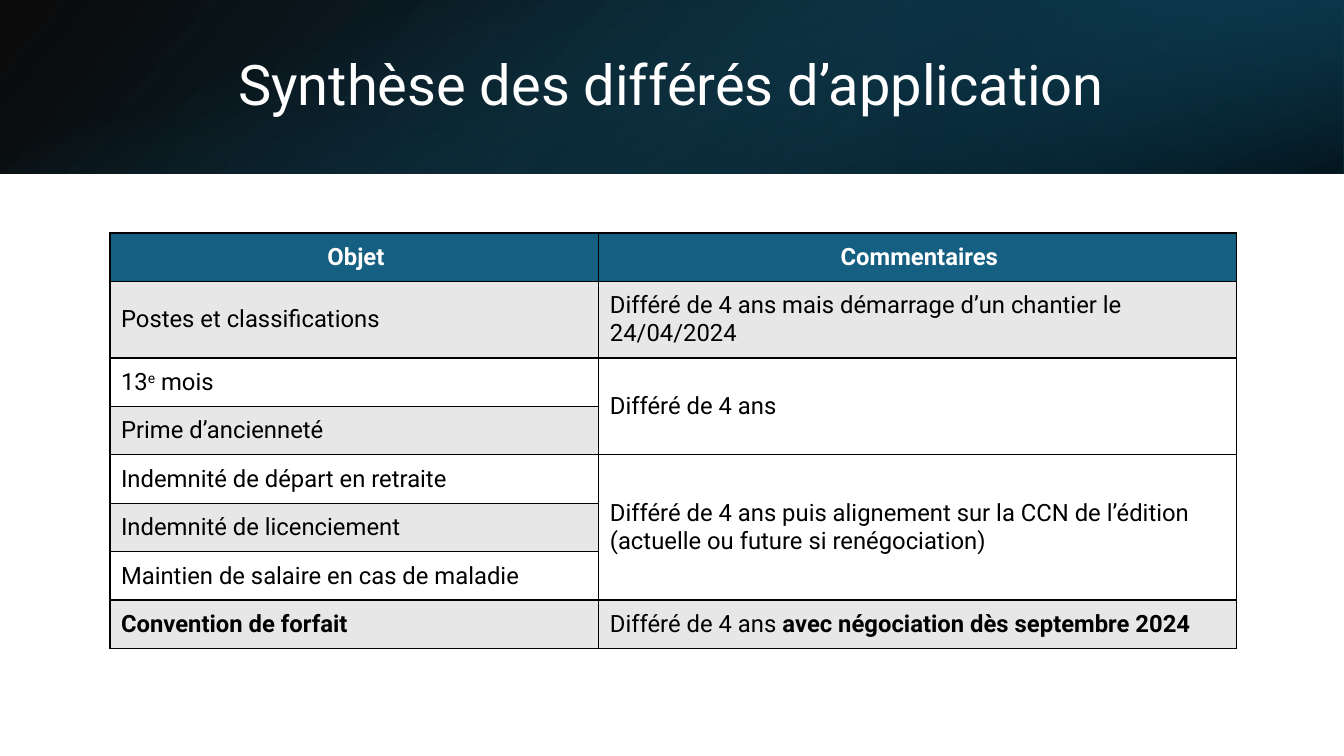
from dataclasses import dataclass

from lxml.etree import SubElement
from pptx import Presentation
from pptx.dml.color import RGBColor as RGB
from pptx.enum.shapes import MSO_SHAPE as SHAPE
from pptx.enum.text import MSO_ANCHOR as ANCHOR, PP_ALIGN as ALIGN
from pptx.oxml.ns import qn
from pptx.util import Cm, Pt


@dataclass(frozen=True)
class Theme:
    """Fonts, type sizes and colours of the slide."""
    font: str = "Roboto"
    title_size: float = 40
    table_size: float = 17
    accent: str = "156082"
    accent_mid: str = "104862"
    accent_dark: str = "0B3041"
    black: str = "000000"
    white: str = "FFFFFF"
    stripe: str = "E7E7E7"


WIDTH, HEIGHT, BAND = 33.87, 19.05, 4.37
INSETS = dict(margin_left=Cm(0.28), margin_top=Cm(0.2),
              margin_right=Cm(0.2), margin_bottom=Cm(0.2))
BOLD, SUPER = {"bold": True}, {"baseline": 30000}
ROWS = [
    ("Postes et classifications", "Différé de 4 ans mais démarrage d’un chantier le 24/04/2024"),
    (["13", ("e", SUPER), " mois"], "Différé de 4 ans"),
    ("Prime d’ancienneté", None),
    ("Indemnité de départ en retraite",
     "Différé de 4 ans puis alignement sur la CCN de l’édition (actuelle ou future si renégociation)"),
    ("Indemnité de licenciement", None),
    ("Maintien de salaire en cas de maladie", None),
    ([("Convention de forfait", BOLD)],
     ["Différé de 4 ans ", ("avec négociation dès septembre 2024", BOLD)]),
]


def set_values(obj, values):
    """Set each named value on the object."""
    for name, value in values.items():
        setattr(obj, name, value)


class Deck:
    """Holds the theme and the current slide."""

    def __init__(self, prs, theme):
        """Add a blank slide to draw on."""
        self.theme = theme
        self.slide = prs.slides.add_slide(prs.slide_layouts[6])

    def gradient(self, box, stops, angle, rotation=0, flip=False):
        """Draw a rectangle with a translucent two-stop gradient."""
        s = self.slide.shapes.add_shape(SHAPE.RECTANGLE, *map(Cm, box))
        s.shadow.inherit = False
        s.line.fill.background()
        s.rotation = rotation
        if flip:
            s._element.spPr.xfrm.set("flipH", "1")
        s.fill.gradient()
        s.fill.gradient_angle = 360 - angle
        for stop, (position, color, _) in zip(s.fill.gradient_stops, stops):
            stop.position = position / 100
            stop.color.rgb = RGB.from_string(color)
        for node, (_, _, opacity) in zip(s._element.spPr.iter(qn("a:srgbClr")), stops):
            SubElement(node, qn("a:alpha"), val=str(opacity * 1000))

    def add_text(self, tf, content, size, color, align, bold=False):
        """Add plain text or a list of formatted runs."""
        p = tf.paragraphs[0]
        p.alignment = align
        for part in [content] if isinstance(content, str) else content:
            text, style = (part, {}) if isinstance(part, str) else part
            r = p.add_run()
            r.text = text
            set_values(r.font, dict(name=self.theme.font, size=Pt(size),
                                    bold=style.get("bold", bold)))
            r.font.color.rgb = RGB.from_string(color)
            if "baseline" in style:
                r.font._element.set("baseline", str(style["baseline"]))
        return p

    def title(self, box, text):
        """Add the centred slide title."""
        tf = self.slide.shapes.add_textbox(*map(Cm, box)).text_frame
        set_values(tf, dict(word_wrap=True, vertical_anchor=ANCHOR.MIDDLE))
        p = self.add_text(tf, text, self.theme.title_size, self.theme.white, ALIGN.CENTER)
        p.line_spacing = 0.9

    def cell(self, cell, fill):
        """Give a cell its borders, fill and insets."""
        for side in ("lnL", "lnR", "lnT", "lnB"):
            ln = SubElement(cell._tc.get_or_add_tcPr(), qn(f"a:{side}"), w=str(Pt(1)))
            solid = SubElement(ln, qn("a:solidFill"))
            SubElement(solid, qn("a:srgbClr"), val=self.theme.black)
        cell.fill.solid()
        cell.fill.fore_color.rgb = RGB.from_string(fill)
        set_values(cell, dict(INSETS, vertical_anchor=ANCHOR.MIDDLE))

    def table(self, left, top, widths, heights, header, rows):
        """Add a striped table; None continues the cell above."""
        t = self.theme
        box = left, top, sum(widths), sum(heights)
        table = self.slide.shapes.add_table(len(heights), len(widths), *map(Cm, box)).table
        for column, width in zip(table.columns, widths):
            column.width = Cm(width)
        for row, height in zip(table.rows, heights):
            row.height = Cm(height)
        spans = {}
        for i, row in enumerate([header, *rows]):
            fill = t.accent if i == 0 else t.stripe if i % 2 else t.white
            color, align = (t.white, ALIGN.CENTER) if i == 0 else (t.black, ALIGN.LEFT)
            for j, content in enumerate(row):
                cell = table.cell(i, j)
                self.cell(cell, t.white if content is None else fill)
                if content is None:
                    spans[j][-1][1] = i
                    continue
                self.add_text(cell.text_frame, content, t.table_size, color, align, i == 0)
                spans.setdefault(j, []).append([i, i])
        for j, column_spans in spans.items():
            for first, last in column_spans:
                if last > first:
                    table.cell(first, j).merge(table.cell(last, j))


def main():
    """Build and save the slide."""
    prs = Presentation()
    set_values(prs, dict(slide_width=Cm(WIDTH), slide_height=Cm(HEIGHT)))
    t = Theme()
    deck = Deck(prs, t)
    third, shift = WIDTH / 3, (WIDTH - BAND) / 2
    deck.gradient((0, 0, WIDTH, BAND), [(0, t.black, 96), (100, t.accent_mid, 100)], 140, flip=True)
    deck.gradient((2 * third, 0, third, BAND),
                  [(19, t.accent_dark, 68), (100, t.accent, 79)], 320, 180, True)
    deck.gradient((shift, -shift, BAND, WIDTH), [(23, t.accent, 0), (99, t.black, 74)], 340, 90)
    deck.title((2.97, 0.97, 27.89, 2.44), "Synthèse des différés d’application")
    deck.table(2.77, 5.87, [12.32, 16.08], [1.22, 1.93] + [1.22] * 6,
               ("Objet", "Commentaires"), ROWS)
    prs.save("out.pptx")


if __name__ == "__main__":
    main()
